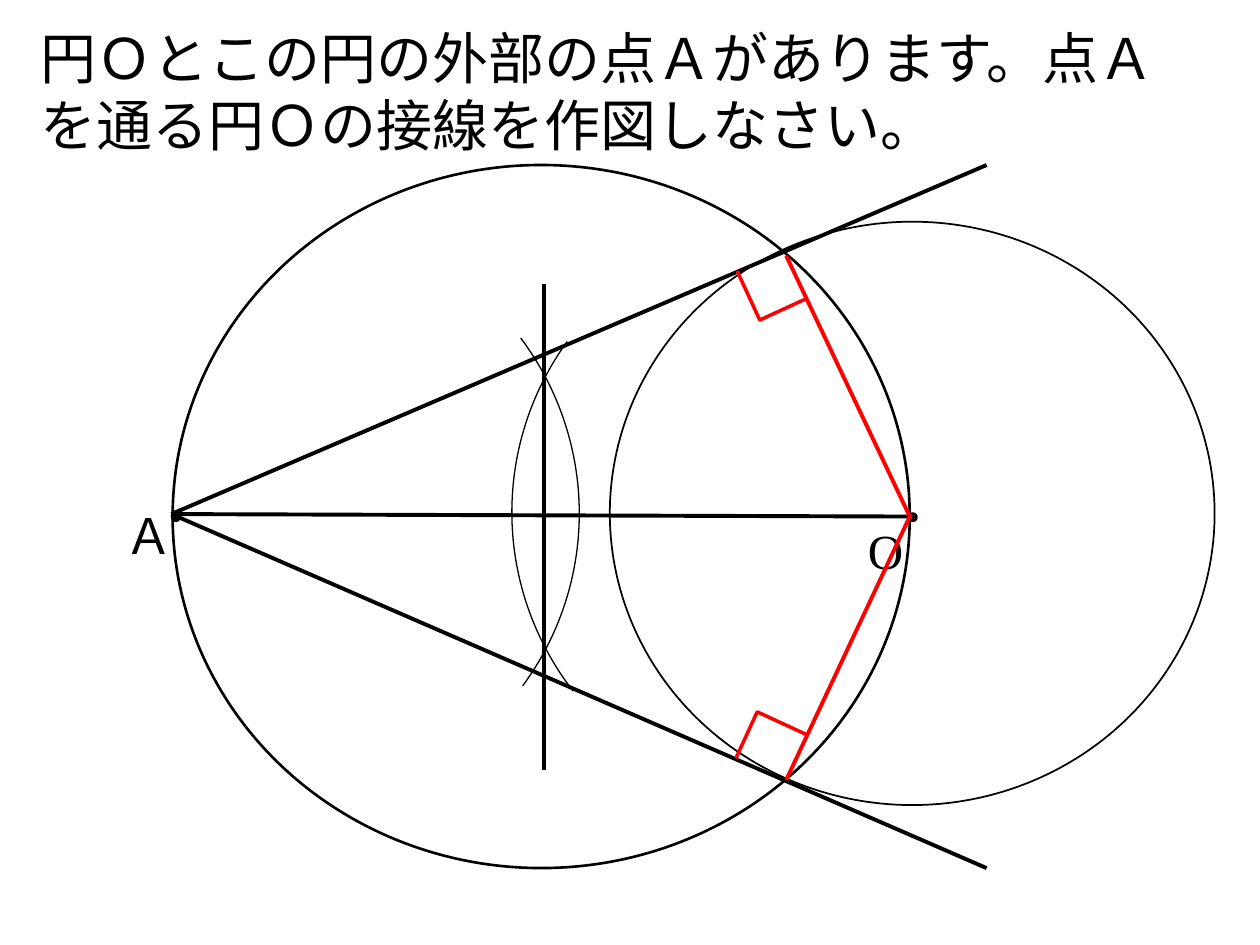
from pptx import Presentation
from pptx.dml.color import RGBColor
from pptx.enum.shapes import MSO_CONNECTOR, MSO_SHAPE
from pptx.enum.text import MSO_ANCHOR, MSO_AUTO_SIZE
from pptx.oxml.ns import qn
from pptx.util import Inches, Pt
from lxml import etree

BLACK = "000000"
RED = "FF0000"
POINT_A = (0, 2.77)
POINT_O = (5.87, 2.79)


def color(value):
    return RGBColor.from_string(value)


def place(box, x, y):
    return Inches(box[0] + x), Inches(box[1] + y)


def style_outline(shape, line_color, weight, fill=None):
    shape.shadow.inherit = False
    if fill:
        shape.fill.solid()
        shape.fill.fore_color.rgb = color(fill)
    else:
        shape.fill.background()
    shape.line.color.rgb = color(line_color)
    shape.line.width = Pt(weight)


def add_curve(slide, box, area, weight, kind=MSO_SHAPE.OVAL, fill=None):
    x, y, width, height = area
    curve = slide.shapes.add_shape(kind, *place(box, x, y), Inches(width), Inches(height))
    style_outline(curve, BLACK, weight, fill)
    return curve


def add_segment(slide, box, start, end, line_color=BLACK):
    segment = slide.shapes.add_connector(
        MSO_CONNECTOR.STRAIGHT, *place(box, *start), *place(box, *end))
    segment.line.color.rgb = color(line_color)
    segment.line.width = Pt(2.25)
    etree.SubElement(segment._element.spPr, qn("a:effectLst"))


def add_text(slide, box, area, text, size, font, wrap):
    x, y, width, height = area
    holder = slide.shapes.add_textbox(*place(box, x, y), Inches(width), Inches(height))
    frame = holder.text_frame
    frame.word_wrap = wrap
    frame.text = text
    run_font = frame.paragraphs[0].runs[0].font
    run_font.name = font
    run_font.size = Pt(size)
    run_font.color.rgb = color(BLACK)
    return frame


def add_problem(slide, box):
    problem = add_text(
        slide, box, (0, 0, box[2], box[3]),
        "円Ｏとこの円の外部の点Ａがあります。点Ａを通る円Ｏの接線を作図しなさい。",
        32, "Calibri", True)
    problem.vertical_anchor = MSO_ANCHOR.MIDDLE


def add_point_label(slide, box, area, text):
    label = add_text(slide, box, area, text, 28, "Times New Roman", False)
    label.auto_size = MSO_AUTO_SIZE.SHAPE_TO_FIT_TEXT


def add_compass_arc(slide, box, left, rotation, end_angle):
    arc = add_curve(slide, box, (left, 0.45, 4.63, 4.62), 0.75, MSO_SHAPE.ARC)
    arc.rotation = rotation
    for index, angle in enumerate((277.73, end_angle)):
        arc.adjustments[index] = angle * 0.6


def add_right_angle(slide, box, corners):
    points = [place(box, *corner) for corner in corners]
    builder = slide.shapes.build_freeform(*points[0])
    builder.add_line_segments(points[1:], close=False)
    style_outline(builder.convert_to_shape(), RED, 2)


def add_construction(slide, box):
    width, height = box[2:]
    add_curve(slide, box, (3.48, 0.45, 4.8, 4.63), 1)
    add_point_label(slide, box, (5.43, 2.77, 0.46, 0.57), "O")
    for dot_left in (0.01, 5.86):
        add_curve(slide, box, (dot_left, 2.77, 0.05, 0.05), 2, fill=BLACK)
    add_curve(slide, box, (0.01, 0, 5.85, height), 1.5)
    add_segment(slide, box, POINT_O, POINT_A)
    add_compass_arc(slide, box, -1.39, 45.4, 351)
    add_compass_arc(slide, box, 2.7, 224.5, 351.47)
    add_segment(slide, box, (2.96, 4.8), (2.96, 0.94))
    for tangent_end in (0, height):
        add_segment(slide, box, POINT_A, (width, tangent_end))
    add_point_label(slide, box, (-0.47, 2.65, 0.48, 0.57), "Ａ")
    for center_y, contact_y in ((2.81, 0.72), (2.77, 4.88)):
        add_segment(slide, box, (POINT_O[0], center_y), (4.88, contact_y), RED)
    add_right_angle(slide, box, [(4.49, 0.84), (4.67, 1.23), (5.04, 1.06)])
    add_right_angle(slide, box, [(5.04, 4.52), (4.65, 4.34), (4.48, 4.71)])


def main():
    deck = Presentation()
    deck.slide_width = Inches(10)
    deck.slide_height = Inches(7.5)
    slide = deck.slides.add_slide(deck.slide_layouts[6])
    add_problem(slide, (0.22, 0.21, 9.45, 1.02))
    add_construction(slide, (1.36, 1.31, 6.47, 5.58))
    deck.save("out.pptx")


if __name__ == "__main__":
    main()
